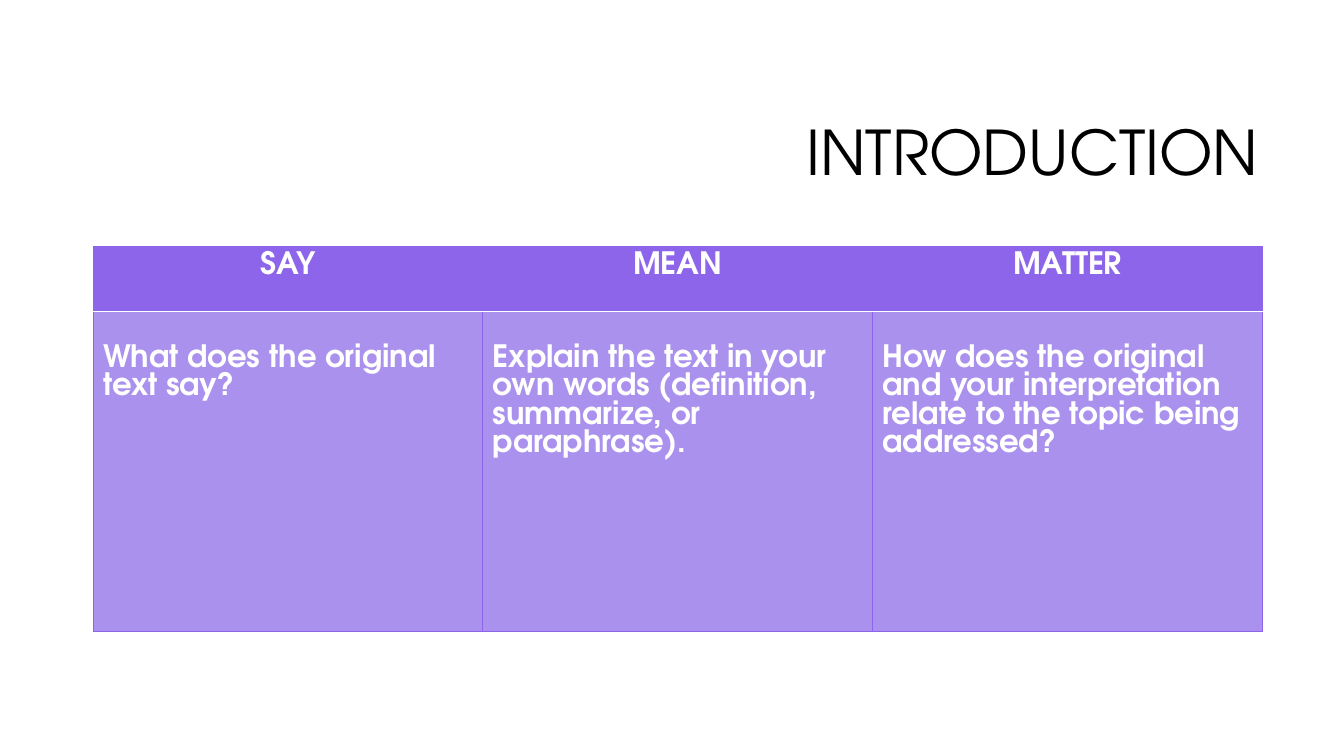
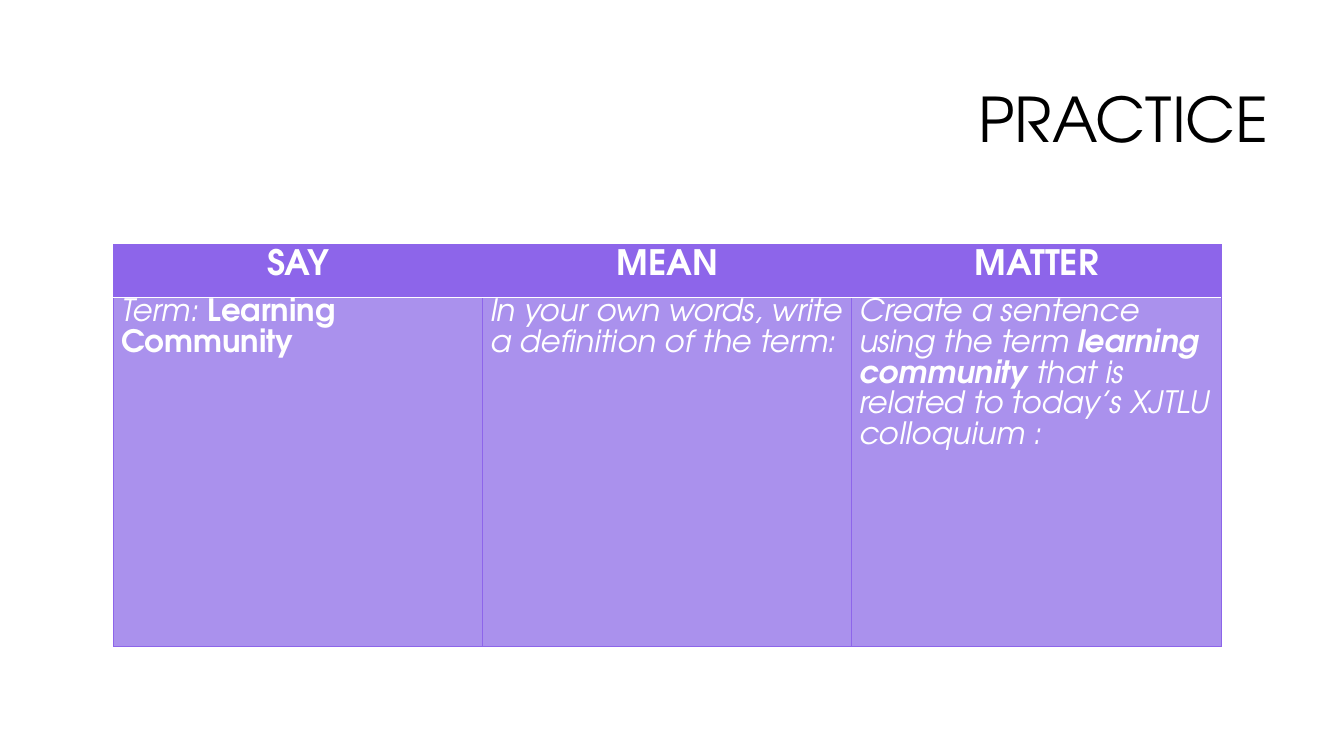
from pptx import Presentation
from pptx.dml.color import RGBColor
from pptx.enum.text import MSO_ANCHOR as Anchor, PP_ALIGN as Align
from pptx.oxml import parse_xml
from pptx.oxml.ns import nsdecls
from pptx.util import Cm, Pt

FACE = "TeX Gyre Adventor"
DEEP, PALE, WHITE, BLACK = "8D65EA", "AA91ED", "FFFFFF", "000000"
HEADS = ["SAY", "MEAN", "MATTER"]


def style(para, size, hue):
    para.font.name = FACE
    para.font.size = Pt(size)
    para.font.color.rgb = RGBColor.from_string(hue)


def paint(cell, fill, edges):
    props = cell._tc.get_or_add_tcPr()
    for side, (hue, width) in zip("LRTB", edges):
        props.append(parse_xml(
            f'<a:ln{side} {nsdecls("a")} w="{Pt(width)}"><a:solidFill>'
            f'<a:srgbClr val="{hue}"/></a:solidFill></a:ln{side}>'))
    cell.fill.solid()
    cell.fill.fore_color.rgb = RGBColor.from_string(fill)


EDGE, RULE = (DEEP, 0.75), (WHITE, 1)

pages = [
    dict(
        title="INTRODUCTION", spot=(8.05, 2.13), table=(2.35, 6.22),
        width=9.82, rows=(1.63, 8.05), size=22, space=1.0,
        pad=(0.25, 0.84),
        cells=[
            [("What does the original text say?", True, False)],
            [("Explain the text in your own words (definition, summarize, "
              "or paraphrase).", True, False)],
            [("How does the original and your interpretation relate to the "
              "topic being addressed?", True, False)],
        ]),
    dict(
        title="PRACTICE", spot=(8.31, 1.3), table=(2.87, 6.17),
        width=9.3, rows=(1.32, 8.81), size=25, space=1.07,
        pad=(0.18, 0),
        cells=[
            [("Term: ", False, True), ("Learning Community", True, False)],
            [("In your own words, write a definition of the term:",
              False, True)],
            [("Create a sentence using the term ", False, True),
             ("learning community", True, True),
             (" that is related to today’s XJTLU colloquium :", False, True)],
        ]),
]

deck = Presentation()
deck.slide_width, deck.slide_height = Cm(33.87), Cm(19.05)

for page in pages:
    slide = deck.slides.add_slide(deck.slide_layouts[5])
    title = slide.shapes.title
    title.left, title.top = map(Cm, page["spot"])
    title.width, title.height = Cm(23.93), Cm(3.58)
    title.text_frame.vertical_anchor = Anchor.MIDDLE
    title.text_frame.text = page["title"]
    para = title.text_frame.paragraphs[0]
    para.alignment = Align.RIGHT
    para.line_spacing = 0.9
    style(para, 44, BLACK)

    left, top = map(Cm, page["table"])
    grid = slide.shapes.add_table(
        2, len(HEADS), left, top, Cm(page["width"] * len(HEADS)),
        Cm(sum(page["rows"]))).table
    for row, height in zip(grid.rows, page["rows"]):
        row.height = Cm(height)

    for col, (head, parts) in enumerate(zip(HEADS, page["cells"])):
        grid.columns[col].width = Cm(page["width"])
        cell = grid.cell(0, col)
        paint(cell, DEEP, [EDGE, EDGE, EDGE, RULE])
        cell.text = head
        para = cell.text_frame.paragraphs[0]
        para.alignment = Align.CENTER
        style(para, page["size"], WHITE)
        para.font.bold = True

        cell = grid.cell(1, col)
        paint(cell, PALE, [EDGE, EDGE, RULE, EDGE])
        side, above = map(Cm, page["pad"])
        cell.margin_left = cell.margin_right = side
        cell.margin_top, cell.margin_bottom = above, 0
        para = cell.text_frame.paragraphs[0]
        para.line_spacing = page["space"]
        style(para, 22, WHITE)
        for text, bold, slant in parts:
            run = para.add_run()
            run.text = text
            run.font.bold, run.font.italic = bold, slant

deck.save("out.pptx")
